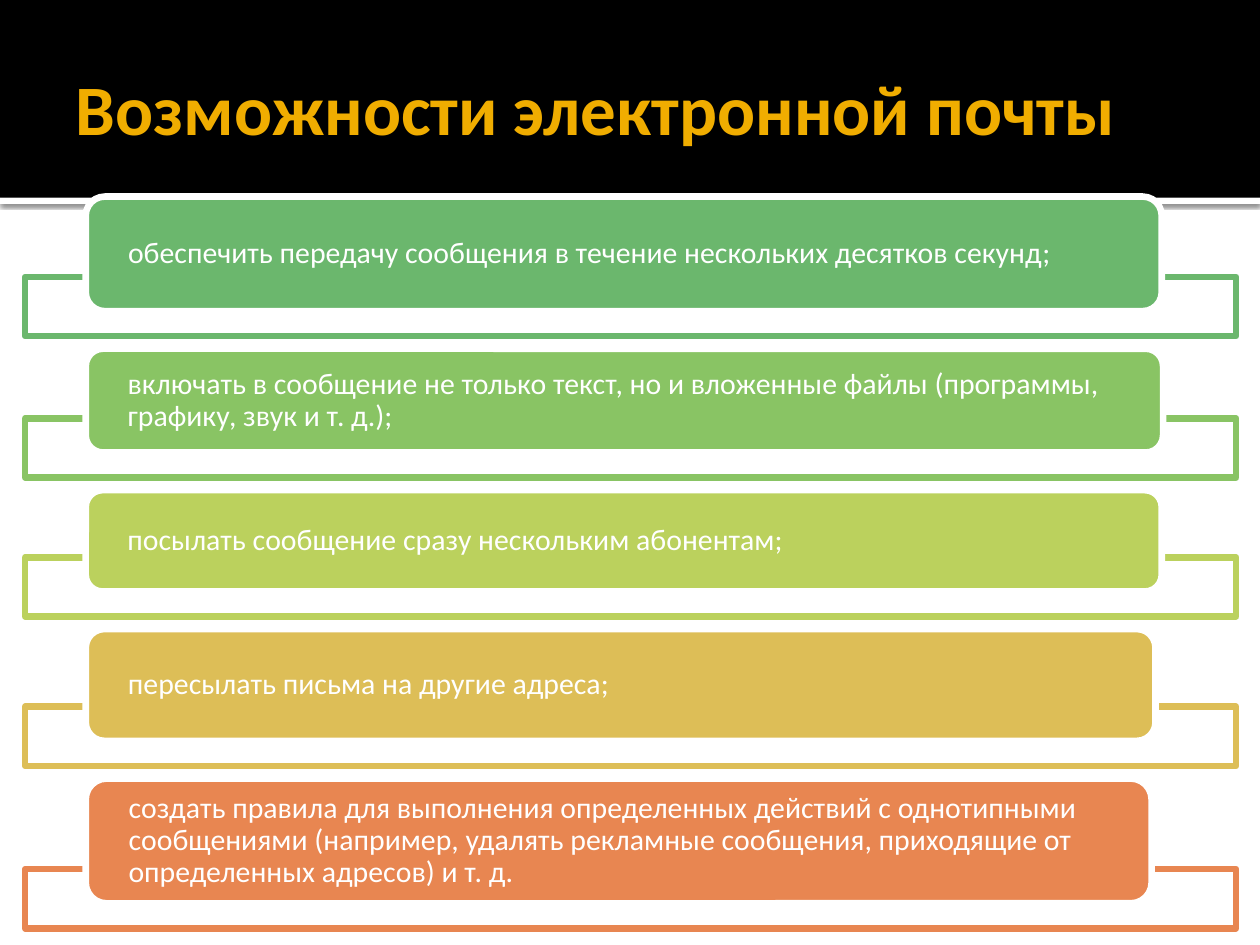
from lxml.etree import SubElement
from pptx import Presentation
from pptx.dml.color import RGBColor
from pptx.enum.shapes import MSO_SHAPE
from pptx.enum.text import MSO_ANCHOR, PP_ALIGN
from pptx.oxml.ns import qn
from pptx.util import Pt

COLORS = {
    "white": "FFFFFF", "black": "000000", "title": "F0AD00",
    "green": "6BB76D", "light_green": "89C464", "lime": "BBD15D",
    "gold": "DDBE57", "orange": "E88651",
}

# Color, box width, box height, text
ITEMS = [
    ("green", 614.9, 65.5,
     "обеспечить передачу сообщения в течение нескольких десятков секунд;"),
    ("light_green", 615.6, 59.3,
     "включать в сообщение не только текст, но и вложенные файлы "
     "(программы, графику, звук и т. д.);"),
    ("lime", 614.9, 57.9, "посылать сообщение сразу нескольким абонентам;"),
    ("gold", 611.3, 63.9, "пересылать письма на другие адреса;"),
    ("orange", 609.1, 71.3,
     "создать правила для выполнения определенных действий с однотипными "
     "сообщениями (например, удалять рекламные сообщения, приходящие от "
     "определенных адресов) и т. д."),
]

FIRST_TOP = 112.3
BOX_GAP = 21.5
BOX_LEFT = 49
FRAME_LEFT, FRAME_WIDTH, FRAME_HEIGHT = 14.4, 692, 33.8
FRAME_OVERLAP = 19.5
LINE_WIDTH = 3.78


class SlideBuilder:
    font = "Calibri"

    def __init__(self, slide):
        self.slide = slide

    def color(self, name):
        return RGBColor.from_string(COLORS[name])

    def shape(self, kind, left, top, width, height, fill, line=None):
        shape = self.slide.shapes.add_shape(
            kind, Pt(left), Pt(top), Pt(width), Pt(height))
        shape.shadow.inherit = False
        shape.fill.solid()
        shape.fill.fore_color.rgb = self.color(fill)
        if line:
            shape.line.color.rgb = self.color(line)
            shape.line.width = Pt(LINE_WIDTH)
        else:
            shape.line.fill.background()
        return shape

    def text(self, shape, text, size, color, margins, bold=False):
        frame = shape.text_frame
        frame.word_wrap = True
        frame.vertical_anchor = MSO_ANCHOR.MIDDLE
        (frame.margin_left, frame.margin_top,
         frame.margin_right, frame.margin_bottom) = map(Pt, margins)
        paragraph = frame.paragraphs[0]
        paragraph.alignment = PP_ALIGN.LEFT
        run = paragraph.add_run()
        run.text = text
        run.font.name = self.font
        run.font.size = Pt(size)
        run.font.bold = bold
        run.font.color.rgb = self.color(color)
        return paragraph

    def header(self):
        stripe = self.shape(MSO_SHAPE.RECTANGLE, 0, 113, 720, 3.6, "white")
        self.add_shadow(stripe)
        band = self.shape(MSO_SHAPE.RECTANGLE, 0, 0, 720, 113, "black")
        # The title stands in front of the header band
        for shape in (stripe, band):
            self.slide.shapes.title.element.addprevious(shape.element)

    def add_shadow(self, shape):
        effects = shape.element.spPr.find(qn("a:effectLst"))
        shadow = SubElement(
            effects, qn("a:outerShdw"), blurRad=str(Pt(2.5)),
            dist=str(Pt(0.8)), dir="5400000", rotWithShape="0")
        color = SubElement(shadow, qn("a:srgbClr"), val=COLORS["black"])
        SubElement(color, qn("a:alpha"), val="60000")

    def title(self, text):
        title = self.slide.shapes.title
        title.left, title.top, title.width, title.height = map(
            Pt, (36, 12.2, 648, 98.6))
        self.text(title, text, 40.5, "title", (7.2, 3.6, 3.6, 3.6), True)

    def frame(self, top, color):
        frame = self.shape(MSO_SHAPE.RECTANGLE, FRAME_LEFT, top,
                           FRAME_WIDTH, FRAME_HEIGHT, "white", color)
        fill_color = frame.element.spPr.find(
            qn("a:solidFill")).find(qn("a:srgbClr"))
        SubElement(fill_color, qn("a:alpha"), val="90000")

    def box(self, top, width, height, color, text):
        box = self.shape(MSO_SHAPE.ROUNDED_RECTANGLE, BOX_LEFT, top,
                         width, height, color, "white")
        paragraph = self.text(box, text, 17, "white", (21, 3, 21, 3))
        paragraph.line_spacing = 0.9


def main():
    presentation = Presentation()
    presentation.slide_width, presentation.slide_height = Pt(720), Pt(540)
    slide = presentation.slides.add_slide(presentation.slide_layouts[5])
    builder = SlideBuilder(slide)

    # Header
    builder.header()
    builder.title("Возможности электронной почты")

    # List: each box overlaps the top edge of its frame
    top = FIRST_TOP
    for color, width, height, text in ITEMS:
        builder.frame(top + height - FRAME_OVERLAP, color)
        builder.box(top, width, height, color, text)
        top += height + BOX_GAP

    presentation.save("out.pptx")


if __name__ == "__main__":
    main()
